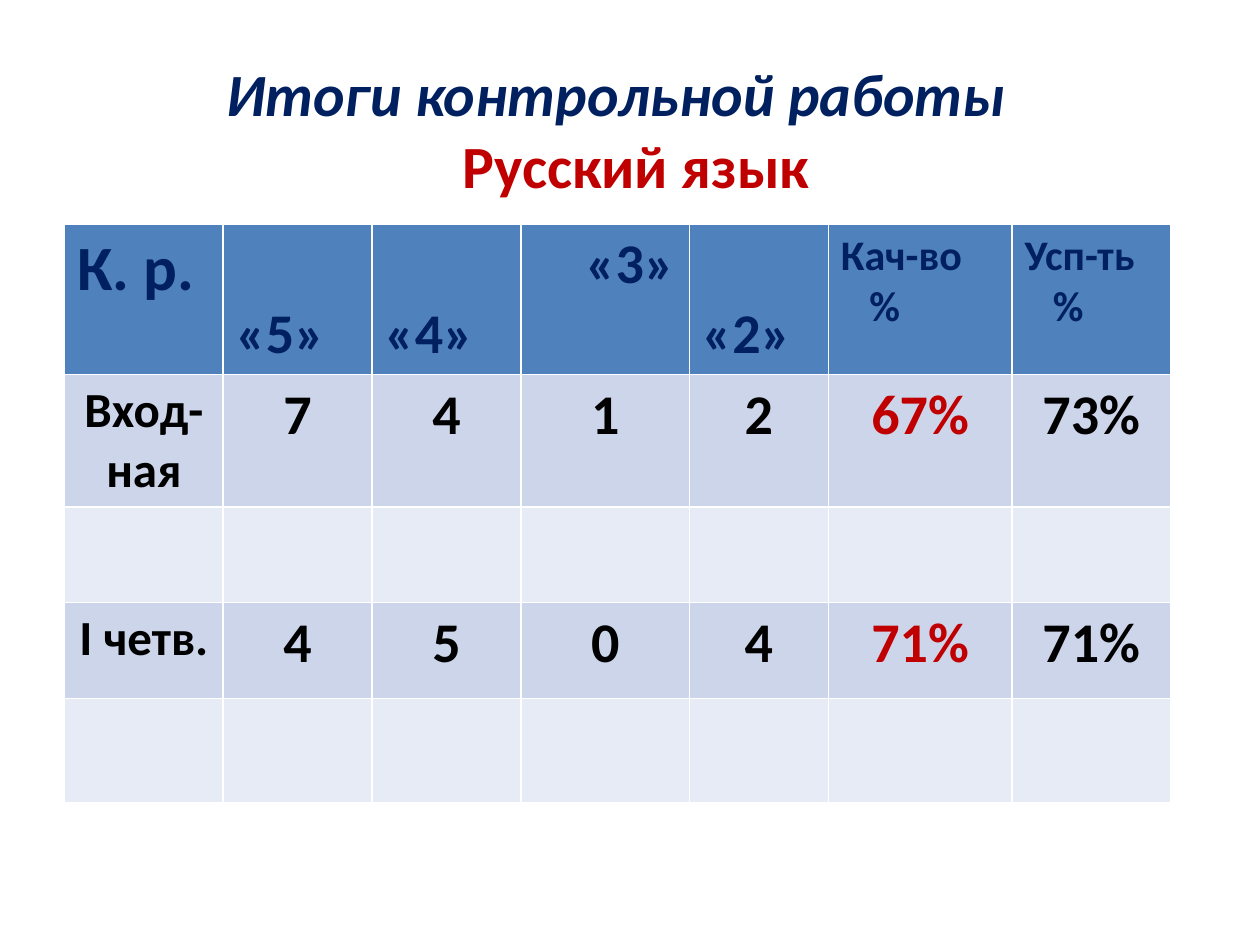
from pptx import Presentation
from pptx import util as u
from pptx.dml.color import RGBColor
from pptx.enum import text

COLORS = {
    "navy": "002060",
    "red": "C00000",
    "black": "000000",
    "header": "4F81BD",
    "band": "CCD5EA",
    "plain": "E7EBF5",
}
COLUMN_WIDTHS = [3.2, 3, 3, 3.4, 2.8, 3.7, 3.2]
ROW_HEIGHTS = [3.03, 2.62, 1.93, 1.93, 2.11]
HEADERS = ["К. р.", "«5»", "«4»", "«3»", "«2»", "Кач-во\n%", "Усп-ть\n%"]
HEADER_SIZES = [36, 32, 32, 32, 32, 24, 24]
RESULTS = {
    1: ["Вход-ная", "7", "4", "1", "2", "67%", "73%"],
    3: ["I четв.", "4", "5", "0", "4", "71%", "71%"],
}
GRADE_THREE, QUALITY = 3, 5


class SlideBuilder:
    """Holds the text style and the current slide, and adds elements to it."""

    def __init__(self, deck, font="Calibri"):
        self.font = font
        self.page = deck.slides.add_slide(deck.slide_layouts[5])

    def style(self, para, size, color, align=text.PP_ALIGN.LEFT, italic=False, left=0, right=0):
        para.alignment = align
        para.font.name = self.font
        para.font.size = u.Pt(size)
        para.font.bold = True
        para.font.italic = italic
        para.font.color.rgb = RGBColor.from_string(COLORS[color])
        properties = para._p.get_or_add_pPr()
        properties.set("marL", str(u.Cm(left)))
        properties.set("marR", str(u.Cm(right)))
        properties.set("indent", "0")

    def title(self, left, top, width, height, heading, subject):
        box = self.page.shapes.title
        box.left, box.top, box.width, box.height = map(u.Cm, (left, top, width, height))
        frame = box.text_frame
        frame.auto_size = text.MSO_AUTO_SIZE.NONE
        frame.vertical_anchor = text.MSO_ANCHOR.BOTTOM
        frame.margin_left = frame.margin_right = frame.margin_bottom = 0
        frame.text = f"{heading}\n{subject}"
        first, second = frame.paragraphs
        self.style(first, 34.2, "navy", text.PP_ALIGN.CENTER, italic=True, right=0.56)
        self.style(second, 34.2, "red", text.PP_ALIGN.CENTER, left=0.24)

    def table(self, left, top, widths, heights):
        frame = self.page.shapes.add_table(
            len(heights), len(widths), u.Cm(left), u.Cm(top), u.Cm(sum(widths)), u.Cm(sum(heights))
        )
        grid = frame.table
        for column, width in zip(grid.columns, widths):
            column.width = u.Cm(width)
        for index, (row, height) in enumerate(zip(grid.rows, heights)):
            row.height = u.Cm(height)
            fill = "header" if index == 0 else "band" if index % 2 else "plain"
            for cell in row.cells:
                cell.fill.solid()
                cell.fill.fore_color.rgb = RGBColor.from_string(COLORS[fill])
        return grid

    def header_row(self, grid, labels, sizes):
        for column, (label, size) in enumerate(zip(labels, sizes)):
            cell = grid.cell(0, column)
            cell.text = label
            if size == 32 and column != GRADE_THREE:
                cell.vertical_anchor = text.MSO_ANCHOR.BOTTOM
            for para in cell.text_frame.paragraphs:
                indent = 1.05 if column == GRADE_THREE else 0.57 if para.text == "%" else 0
                self.style(para, size, "navy", left=indent)

    def result_row(self, grid, row, values):
        for column, value in enumerate(values):
            cell = grid.cell(row, column)
            cell.text = value
            size = 32 if column else 28
            color = "red" if column == QUALITY else "black"
            self.style(cell.text_frame.paragraphs[0], size, color, text.PP_ALIGN.CENTER)


def main():
    deck = Presentation()
    deck.slide_width, deck.slide_height = u.Cm(25.4), u.Cm(19.05)
    builder = SlideBuilder(deck)
    builder.title(1.9, 0.64, 21.6, 3.4, "Итоги контрольной работы", "Русский язык")
    grid = builder.table(1.3, 4.52, COLUMN_WIDTHS, ROW_HEIGHTS)
    builder.header_row(grid, HEADERS, HEADER_SIZES)
    for row, values in RESULTS.items():
        builder.result_row(grid, row, values)
    deck.save("out.pptx")


if __name__ == "__main__":
    main()
